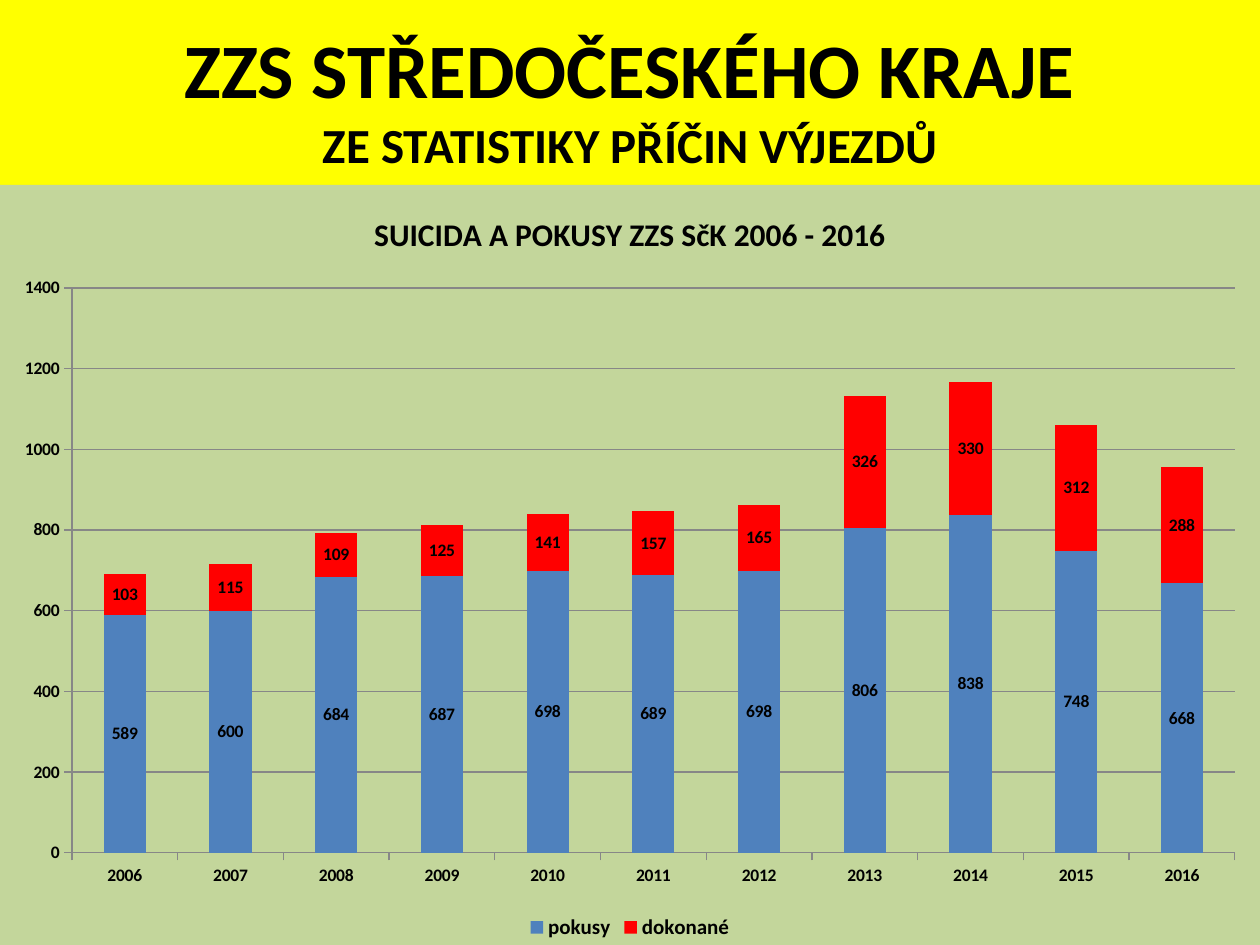
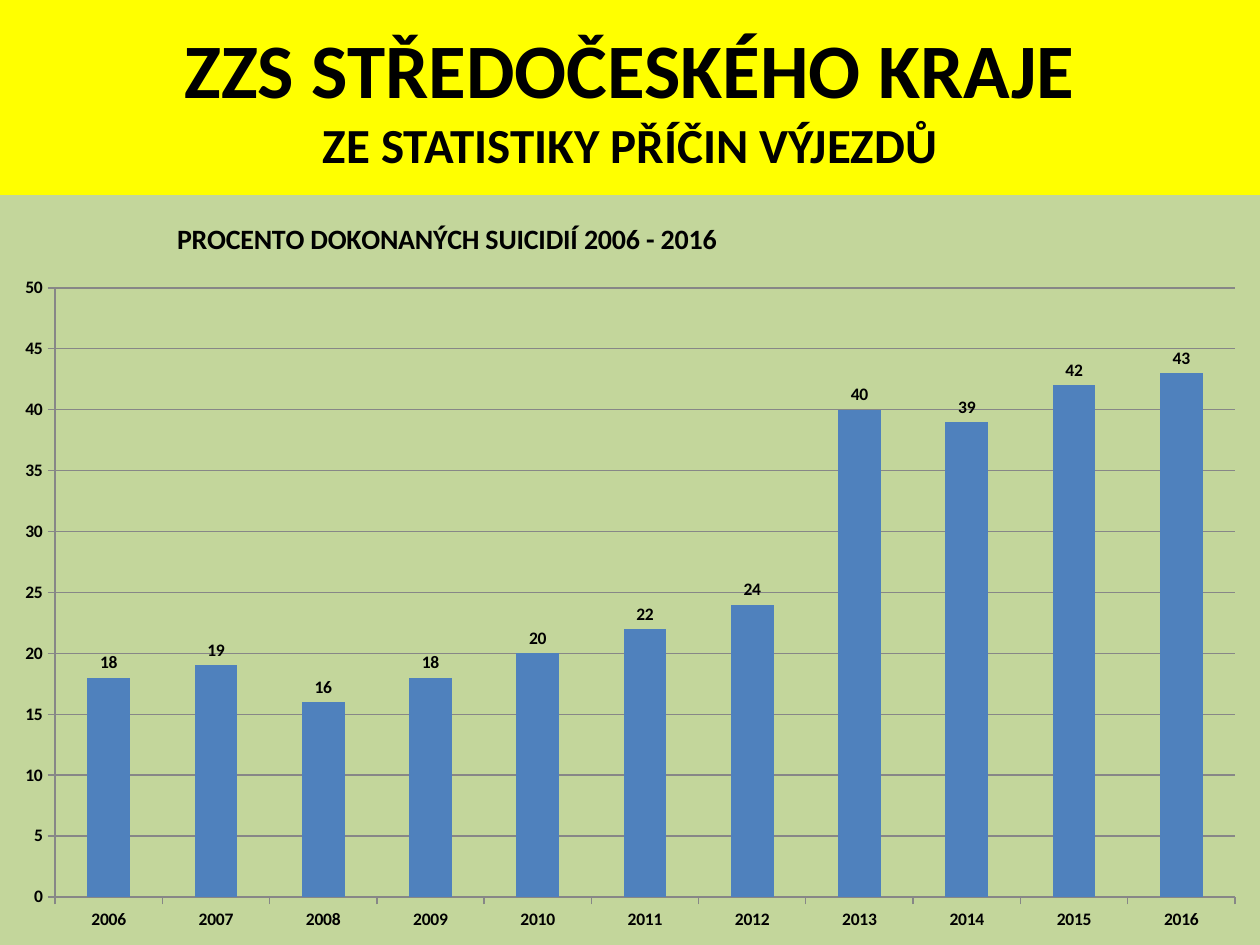
from lxml.etree import SubElement
from pptx import Presentation
from pptx.chart.data import CategoryChartData
from pptx.dml.color import RGBColor
from pptx.enum.chart import XL_CHART_TYPE, XL_LABEL_POSITION, XL_LEGEND_POSITION, XL_TICK_MARK
from pptx.enum.text import MSO_ANCHOR, MSO_AUTO_SIZE, PP_ALIGN
from pptx.oxml import parse_xml
from pptx.oxml.ns import nsdecls, qn
from pptx.util import Emu, Pt

PX = 914400 / 126
W, H, TITLE_H = 1260, 945, 195
FONT = "Calibri"
BLACK, YELLOW, GREEN, BLUE, RED, GREY = "000000", "FFFF00", "C3D69B", "4F81BD", "FF0000", "878787"
YEARS = [str(year) for year in range(2006, 2017)]
TITLE_RUNS = [("ZZS STŘEDOČESKÉHO KRAJE", 44), ("ZE STATISTIKY PŘÍČIN VÝJEZDŮ", 28)]
AREA_FILL = (f'<c:spPr {nsdecls("c", "a")}><a:solidFill><a:srgbClr val="{GREEN}"/></a:solidFill>'
             '<a:ln><a:noFill/></a:ln></c:spPr>')


def style(font, size, color=BLACK):
    font.name, font.size, font.bold = FONT, Pt(size), True
    font.color.rgb = RGBColor.from_string(color)


def place(parent, index, **fractions):
    """Give a chart part a manual layout in fractions of the chart."""
    for old in parent.findall(qn("c:layout")):
        parent.remove(old)
    layout = parse_xml(f'<c:layout {nsdecls("c")}/>')
    manual = SubElement(layout, qn("c:manualLayout"))
    if "w" in fractions:
        SubElement(manual, qn("c:layoutTarget"), val="inner")
    for name in ("x", "y"):
        SubElement(manual, qn(f"c:{name}Mode"), val="edge")
    for name, value in fractions.items():
        SubElement(manual, qn(f"c:{name}"), val=f"{value:.4f}")
    parent.insert(index, layout)


# Plot boxes are left, top, right, bottom in slide px; title_at is left, top
slides = [
    dict(kind=XL_CHART_TYPE.COLUMN_STACKED, top=185, plot=(72, 288, 1235, 853),
         title="SUICIDA A POKUSY ZZS SčK 2006 - 2016", title_size=18, title_at=None,
         maximum=1400, step=200, overlap=100, labels=XL_LABEL_POSITION.CENTER,
         series=[("pokusy", BLUE, (589, 600, 684, 687, 698, 689, 698, 806, 838, 748, 668)),
                 ("dokonané", RED, (103, 115, 109, 125, 141, 157, 165, 326, 330, 312, 288))]),
    dict(kind=XL_CHART_TYPE.COLUMN_CLUSTERED, top=TITLE_H, plot=(55, 288, 1235, 897),
         title="PROCENTO DOKONANÝCH SUICIDIÍ 2006 - 2016", title_size=16, title_at=(172, 215),
         maximum=50, step=5, overlap=0, labels=XL_LABEL_POSITION.OUTSIDE_END,
         series=[("Series 1", BLUE, (18, 19, 16, 18, 20, 22, 24, 40, 39, 42, 43))]),
]

prs = Presentation()
prs.slide_width, prs.slide_height = Emu(round(W * PX)), Emu(round(H * PX))

for spec_row in slides:
    s = prs.slides.add_slide(prs.slide_layouts[5])

    # Title band
    sp = s.shapes.title
    sp.left, sp.top, sp.width, sp.height = (Emu(round(n * PX)) for n in (0, 0, W, TITLE_H))
    sp.fill.solid()
    sp.fill.fore_color.rgb = RGBColor.from_string(YELLOW)
    tf = sp.text_frame
    tf.auto_size, tf.vertical_anchor = MSO_AUTO_SIZE.NONE, MSO_ANCHOR.MIDDLE
    p = tf.paragraphs[0]
    p.alignment = PP_ALIGN.CENTER
    for i, (text, size) in enumerate(TITLE_RUNS):
        if i:
            p.add_line_break()
        r = p.add_run()
        r.text = text
        style(r.font, size)

    # Chart and its data
    data = CategoryChartData()
    data.categories = YEARS
    for name, color, values in spec_row["series"]:
        data.add_series(name, values)
    top = spec_row["top"]
    height = H - top
    box = [Emu(round(n * PX)) for n in (0, top, W, height)]
    chart = s.shapes.add_chart(spec_row["kind"], *box, data).chart
    style(chart.font, 10)

    # Chart title
    chart.has_title = True
    p = chart.chart_title.text_frame.paragraphs[0]
    r = p.add_run()
    r.text = spec_row["title"]
    style(r.font, spec_row["title_size"])
    chart.chart_title.include_in_layout = False
    if spec_row["title_at"]:
        x, y = spec_row["title_at"]
        place(chart.element.xpath("c:chart/c:title")[0], 1, x=x / W, y=(y - top) / height)

    # Chart and plot backgrounds, plot position
    chart.element.xpath("c:chart")[0].addnext(parse_xml(AREA_FILL))
    plot_area = chart.element.xpath("c:chart/c:plotArea")[0]
    plot_area.append(parse_xml(AREA_FILL))
    x1, y1, x2, y2 = spec_row["plot"]
    place(plot_area, 0, x=x1 / W, y=(y1 - top) / height, w=(x2 - x1) / W, h=(y2 - y1) / height)

    # Columns and value labels
    plot = chart.plots[0]
    plot.gap_width, plot.overlap, plot.vary_by_categories = 150, spec_row["overlap"], False
    for series, (name, color, values) in zip(plot.series, spec_row["series"]):
        series.format.fill.solid()
        series.format.fill.fore_color.rgb = RGBColor.from_string(color)
        labels = series.data_labels
        labels.show_value, labels.position = True, spec_row["labels"]
        style(labels.font, 10)

    # Axes and gridlines
    value_axis = chart.value_axis
    value_axis.minimum_scale, value_axis.maximum_scale = 0, spec_row["maximum"]
    value_axis.major_unit = spec_row["step"]
    value_axis.has_major_gridlines = True
    lines = [value_axis.major_gridlines.format.line]
    for axis in (chart.category_axis, value_axis):
        axis.major_tick_mark, axis.minor_tick_mark = XL_TICK_MARK.OUTSIDE, XL_TICK_MARK.NONE
        style(axis.tick_labels.font, 10)
        lines.append(axis.format.line)
    for line in lines:
        line.width = Pt(0.75)
        line.color.rgb = RGBColor.from_string(GREY)

    # Only a chart with several series needs a legend
    chart.has_legend = len(spec_row["series"]) > 1
    if chart.has_legend:
        chart.legend.position = XL_LEGEND_POSITION.BOTTOM
        chart.legend.include_in_layout = False
        style(chart.legend.font, 12)

prs.save("out.pptx")
